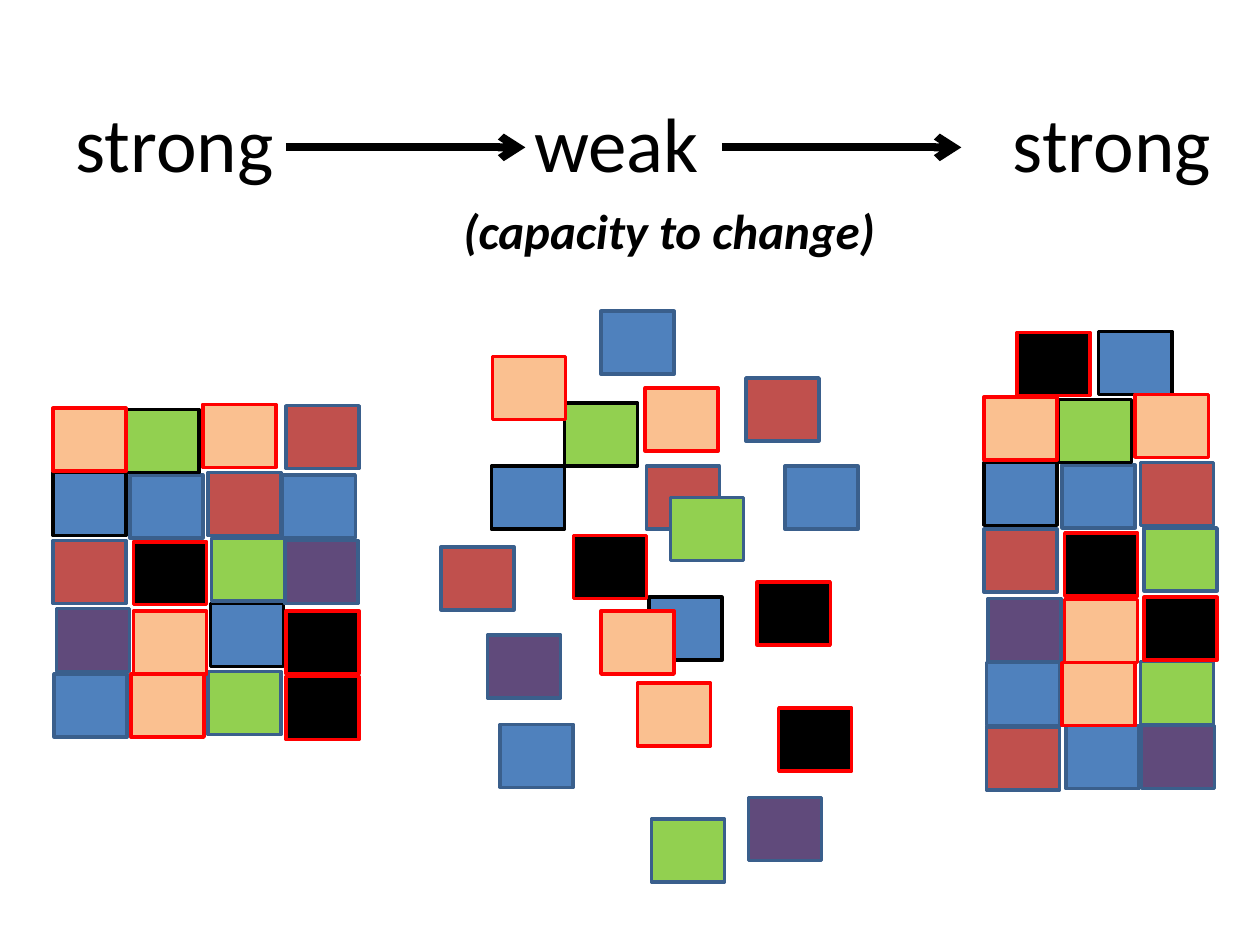
from dataclasses import dataclass

from lxml.etree import SubElement
from pptx import Presentation
from pptx.dml.color import RGBColor
from pptx.enum.shapes import MSO_CONNECTOR as Connector, MSO_SHAPE as Shape
from pptx.enum.text import MSO_ANCHOR as Anchor, PP_ALIGN as Align
from pptx.oxml.ns import qn
from pptx.util import Emu, Pt

PX = 9144
PAGE_SIZE = (1000, 750)
BLOCK_SIZE = (58, 50)

STAGES = ("strong", "weak", "strong")
STAGE_TABS = (364, 744)
STAGES_AREA = (50, 50, 942, 125)
CAPTION = "(capacity to change)"
CAPTION_AREA = (358, 154, 354, 57)
ARROW_STARTS = (227, 573)
ARROW_Y = 117
ARROW_LENGTH = 190

STRONG_BEFORE = {
    "blue_dark": [(42, 375), (167, 479)],
    "blue": [(103, 377), (224, 377), (43, 535)],
    "red": [(165, 375), (227, 322), (42, 429)],
    "green_dark": [(100, 325)],
    "green": [(168, 427), (165, 533)],
    "purple": [(226, 429), (45, 483)],
    "peach": [(161, 321), (42, 324), (106, 485), (104, 535)],
    "black": [(227, 537), (106, 430), (227, 485)],
}
WEAK = {
    "blue_dark": [(390, 370), (515, 474)],
    "blue": [(477, 247), (623, 370), (397, 575)],
    "red": [(513, 370), (592, 300), (350, 434)],
    "green_dark": [(448, 320)],
    "green": [(532, 395), (517, 650)],
    "purple": [(594, 633), (387, 504)],
    "peach": [(512, 308), (391, 283), (477, 485), (506, 542)],
    "black": [(618, 562), (455, 425), (601, 462)],
}
STRONG_AFTER = {
    "blue_dark": [(781, 367), (872, 263)],
    "blue": [(843, 369), (846, 576), (783, 526)],
    "red": [(905, 367), (783, 577), (781, 420)],
    "green_dark": [(840, 317)],
    "green": [(908, 419), (905, 525)],
    "purple": [(906, 576), (784, 475)],
    "peach": [(901, 313), (781, 315), (845, 476), (843, 526)],
    "black": [(845, 423), (807, 264), (908, 474)],
}
BLOCK_STYLES = {
    "blue_dark": ("4F81BD", "000000"),
    "blue": ("4F81BD", "3A5F8C"),
    "red": ("C0504D", "3A5F8C"),
    "green_dark": ("92D050", "000000"),
    "green": ("92D050", "3A5F8C"),
    "purple": ("604A7B", "3A5F8C"),
    "peach": ("FAC090", "FF0000"),
    "black": ("000000", "FF0000"),
}


@dataclass(frozen=True)
class Theme:
    font: str = "Calibri"
    ink: str = "000000"
    stage_size: int = 44
    caption_size: int = 28
    block_line: float = 2
    arrow_line: float = 4.5


THEME = Theme()


def px(*lengths):
    return [Emu(length * PX) for length in lengths]


def color(code):
    return RGBColor.from_string(code)


def add_text(page, area, text, size, align, anchor, bold=False, italic=False):
    frame = page.shapes.add_textbox(*px(*area)).text_frame
    frame.word_wrap = True
    frame.vertical_anchor = anchor
    para = frame.paragraphs[0]
    para.text = text
    para.alignment = align
    for span in para.runs:
        font = span.font
        font.name, font.size = THEME.font, Pt(size)
        font.bold, font.italic = bold, italic
        font.color.rgb = color(THEME.ink)
    return para


def add_tabs(para, stops):
    tabs = SubElement(para._p.get_or_add_pPr(), qn("a:tabLst"))
    for stop in px(*stops):
        SubElement(tabs, qn("a:tab"), pos=str(stop), algn="l")


def add_blocks(page, pile):
    for style, places in pile.items():
        fill, edge = BLOCK_STYLES[style]
        for place in places:
            block = page.shapes.add_shape(Shape.RECTANGLE, *px(*place, *BLOCK_SIZE))
            block.shadow.inherit = False
            block.fill.solid()
            block.fill.fore_color.rgb = color(fill)
            block.line.color.rgb = color(edge)
            block.line.width = Pt(THEME.block_line)


def add_arrow(page, left):
    ends = px(left, ARROW_Y, left + ARROW_LENGTH, ARROW_Y)
    arrow = page.shapes.add_connector(Connector.STRAIGHT, *ends)
    arrow.line.color.rgb = color(THEME.ink)
    arrow.line.width = Pt(THEME.arrow_line)
    SubElement(arrow.line._get_or_add_ln(), qn("a:tailEnd"), type="arrow")
    SubElement(arrow._element.spPr, qn("a:effectLst"))


def main():
    deck = Presentation()
    deck.slide_width, deck.slide_height = px(*PAGE_SIZE)
    page = deck.slides.add_slide(deck.slide_layouts[6])

    stages = add_text(page, STAGES_AREA, "\t".join(STAGES), THEME.stage_size,
                      Align.LEFT, Anchor.MIDDLE)
    add_tabs(stages, STAGE_TABS)
    for pile in (STRONG_BEFORE, WEAK, STRONG_AFTER):
        add_blocks(page, pile)
    for left in ARROW_STARTS:
        add_arrow(page, left)
    add_text(page, CAPTION_AREA, CAPTION, THEME.caption_size,
             Align.LEFT, Anchor.TOP, bold=True, italic=True)
    deck.save("out.pptx")


if __name__ == "__main__":
    main()
